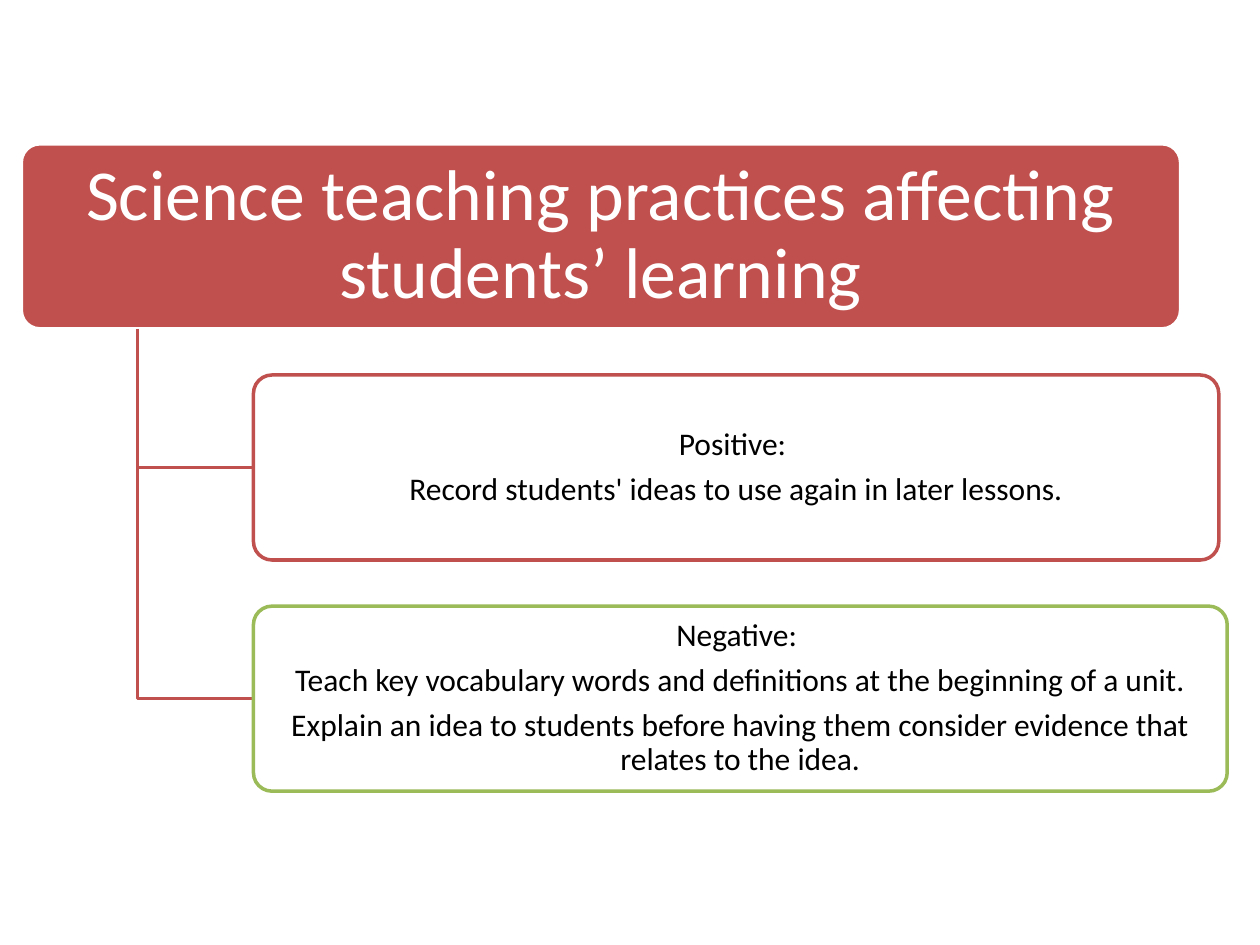
from lxml.etree import SubElement
from pptx import Presentation
from pptx.dml.color import RGBColor
from pptx.enum.shapes import MSO_SHAPE as Shape
from pptx.enum.text import MSO_ANCHOR as Anchor, PP_ALIGN as Align
from pptx.oxml.ns import qn
from pptx.util import Cm, Pt

COLORS = {"red": "C0504D", "green": "9BBB59", "white": "FFFFFF", "black": "000000"}
TOP, PITCH, HEIGHT = 2.9, 4.66, 3.73
TRUNK, BRANCH_END = 2.77, 5.11


def rgb(name):
    return RGBColor.from_string(COLORS[name])


def add_panel(left, top, width, fill, line, lines, size, ink, inset):
    panel = slide.shapes.add_shape(
        Shape.ROUNDED_RECTANGLE, Cm(left), Cm(top), Cm(width), Cm(HEIGHT))
    panel.adjustments[0] = 0.1
    panel.shadow.inherit = False
    panel.fill.solid()
    panel.fill.fore_color.rgb = rgb(fill)
    panel.line.color.rgb = rgb(line)
    panel.line.width = Pt(2)
    frame = panel.text_frame
    frame.word_wrap = True
    frame.vertical_anchor = Anchor.MIDDLE
    frame.margin_left = frame.margin_right = Cm(inset)
    frame.margin_top = frame.margin_bottom = Cm(inset * 2 / 3)
    frame.text = "\n".join(lines)
    for paragraph in frame.paragraphs:
        paragraph.alignment = Align.CENTER
        paragraph.line_spacing = 0.9
        paragraph.space_after = Pt(size * 0.35)
        font = paragraph.runs[0].font
        font.name = "Calibri"
        font.size = Pt(size)
        font.color.rgb = rgb(ink)
    return panel


prs = Presentation()
prs.slide_width, prs.slide_height = Cm(25.4), Cm(19.05)
slide = prs.slides.add_slide(prs.slide_layouts[6])

add_panel(0.43, TOP, 23.37, "red", "white",
          ["Science teaching practices affecting students’ learning"], 41, "white", 0.23)

practices = [
    ("red", 19.46, ["Positive: ",
                    "Record students' ideas to use again in later lessons."]),
    ("green", 19.63, ["Negative: ",
                      "Teach key vocabulary words and definitions at the beginning of a unit.",
                      "Explain an idea to students before having them consider "
                      "evidence that relates to the idea."]),
]
for row, (outline, width, lines) in enumerate(practices, start=1):
    top = TOP + row * PITCH
    middle = top + HEIGHT / 2
    builder = slide.shapes.build_freeform(Cm(TRUNK), Cm(TOP + HEIGHT))
    builder.add_line_segments(
        [(Cm(TRUNK), Cm(middle)), (Cm(BRANCH_END), Cm(middle))], close=False)
    branch = builder.convert_to_shape()
    branch.shadow.inherit = False
    branch.fill.background()
    branch.line.color.rgb = rgb("red")
    branch.line.width = Pt(2)

    practice = add_panel(BRANCH_END, top, width, "white", outline, lines, 18, "black", 0.11)
    fill_color = practice.fill._xPr.find(qn("a:solidFill"))[0]
    SubElement(fill_color, qn("a:alpha"), val="90000")

prs.save("out.pptx")
